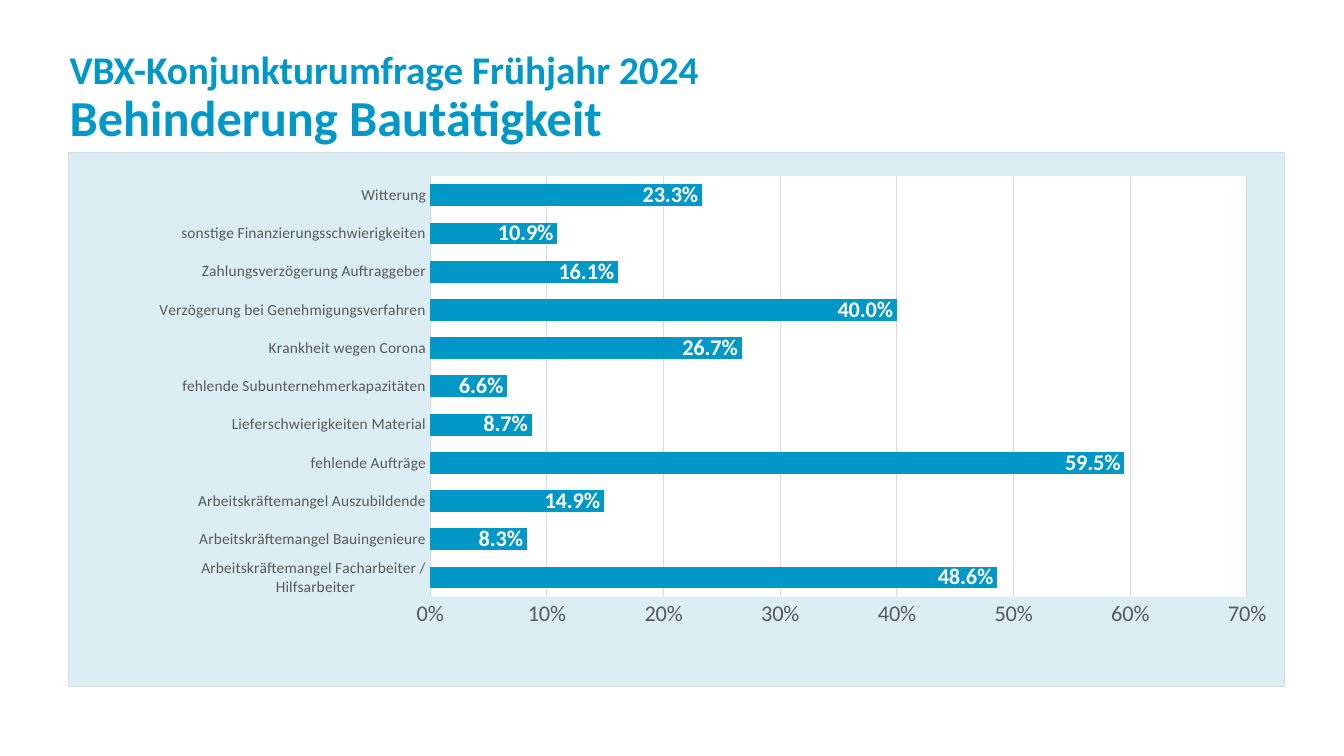
from lxml.etree import fromstring
from pptx import Presentation
from pptx.chart.data import CategoryChartData
from pptx.dml.color import RGBColor
from pptx.enum.chart import XL_CHART_TYPE, XL_LABEL_POSITION, XL_TICK_MARK
from pptx.enum.text import MSO_ANCHOR, MSO_AUTO_SIZE, PP_ALIGN
from pptx.oxml.ns import qn
from pptx.util import Pt

TITLE_LINES = [("VBX-Konjunkturumfrage Frühjahr 2024", 28), ("Behinderung Bautätigkeit", 36)]
OBSTACLES = [
    ("Arbeitskräftemangel Facharbeiter /\n Hilfsarbeiter", 0.486),
    ("Arbeitskräftemangel Bauingenieure", 0.083),
    ("Arbeitskräftemangel Auszubildende", 0.149),
    ("fehlende Aufträge", 0.595),
    ("Lieferschwierigkeiten Material", 0.087),
    ("fehlende Subunternehmerkapazitäten", 0.066),
    ("Krankheit wegen Corona", 0.267),
    ("Verzögerung bei Genehmigungsverfahren", 0.4),
    ("Zahlungsverzögerung Auftraggeber", 0.161),
    ("sonstige Finanzierungsschwierigkeiten", 0.109),
    ("Witterung", 0.233),
]
CHART_LEFT, CHART_TOP, CHART_WIDTH, CHART_HEIGHT = Pt(48.6), Pt(108.7), Pt(869), Pt(382.3)
PLOT_LEFT, PLOT_TOP, PLOT_WIDTH, PLOT_HEIGHT = Pt(258.5), Pt(16.8), Pt(584), Pt(300.9)

FONT = "Calibri"
BLUE = RGBColor(0x01, 0x97, 0xC6)
PALE_BLUE = RGBColor(0xDB, 0xEE, 0xF4)
WHITE = RGBColor(0xFF, 0xFF, 0xFF)
BLACK = RGBColor(0, 0, 0)
TEXT_GREY = RGBColor(0x59, 0x59, 0x59)
LINE_GREY = RGBColor(0xD9, 0xD9, 0xD9)
CHART_NAMESPACE = "http://schemas.openxmlformats.org/drawingml/2006/chart"
DRAWING_NAMESPACE = "http://schemas.openxmlformats.org/drawingml/2006/main"


def format_font(font, size, color, bold=False):
    font.name = FONT
    font.size = Pt(size)
    font.color.rgb = color
    font.bold = bold


def format_line(line):
    line.color.rgb = LINE_GREY
    line.width = Pt(0.75)


def area_properties(fill, border=None):
    outline = f'<a:solidFill><a:srgbClr val="{border}"/></a:solidFill>' if border else "<a:noFill/>"
    return fromstring(
        f'<c:spPr xmlns:c="{CHART_NAMESPACE}" xmlns:a="{DRAWING_NAMESPACE}">'
        f'<a:solidFill><a:srgbClr val="{fill}"/></a:solidFill>'
        f'<a:ln w="{Pt(0.75)}">{outline}</a:ln></c:spPr>'
    )


def plot_layout():
    fractions = {
        "x": PLOT_LEFT / CHART_WIDTH,
        "y": PLOT_TOP / CHART_HEIGHT,
        "w": PLOT_WIDTH / CHART_WIDTH,
        "h": PLOT_HEIGHT / CHART_HEIGHT,
    }
    modes = '<c:xMode val="edge"/><c:yMode val="edge"/>'
    sizes = "".join(f'<c:{name} val="{value}"/>' for name, value in fractions.items())
    return fromstring(
        f'<c:layout xmlns:c="{CHART_NAMESPACE}"><c:manualLayout>'
        f'<c:layoutTarget val="inner"/>{modes}{sizes}</c:manualLayout></c:layout>'
    )


def add_title(slide):
    title = slide.shapes.title
    title.left, title.top, title.width, title.height = Pt(42.5), Pt(22), Pt(874.8), Pt(97.2)
    frame = title.text_frame
    frame.text = "\v".join(text for text, size in TITLE_LINES)
    frame.word_wrap = True
    frame.auto_size = MSO_AUTO_SIZE.NONE
    frame.vertical_anchor = MSO_ANCHOR.MIDDLE
    paragraph = frame.paragraphs[0]
    paragraph.alignment = PP_ALIGN.LEFT
    paragraph.line_spacing = 0.9
    for run, (text, size) in zip(paragraph.runs, TITLE_LINES):
        format_font(run.font, size, BLUE, True)


def add_obstacle_chart(slide):
    data = CategoryChartData(number_format="0.0%")
    data.categories = [name for name, share in OBSTACLES]
    data.add_series("Series 1", [share for name, share in OBSTACLES])
    chart = slide.shapes.add_chart(
        XL_CHART_TYPE.BAR_STACKED, CHART_LEFT, CHART_TOP, CHART_WIDTH, CHART_HEIGHT, data
    ).chart
    chart.has_legend = False
    chart.has_title = False
    format_font(chart.font, 16, BLACK)

    plot = chart.plots[0]
    plot.gap_width = 75
    plot.overlap = 100
    plot.vary_by_categories = False
    series = plot.series[0]
    series.format.fill.solid()
    series.format.fill.fore_color.rgb = BLUE
    labels = series.data_labels
    labels.show_value = True
    labels.position = XL_LABEL_POSITION.INSIDE_END
    labels.number_format = "0.0%"
    labels.number_format_is_linked = False
    format_font(labels.font, 16, WHITE, True)

    for axis, size in ((chart.category_axis, 11), (chart.value_axis, 16)):
        axis.major_tick_mark = XL_TICK_MARK.NONE
        axis.minor_tick_mark = XL_TICK_MARK.NONE
        format_font(axis.tick_labels.font, size, TEXT_GREY)
    format_line(chart.category_axis.format.line)
    value_axis = chart.value_axis
    value_axis.minimum_scale = 0
    value_axis.maximum_scale = 0.7
    value_axis.major_unit = 0.1
    value_axis.tick_labels.number_format = "0%"
    value_axis.tick_labels.number_format_is_linked = False
    value_axis.format.line.fill.background()
    value_axis.has_major_gridlines = True
    format_line(value_axis.major_gridlines.format.line)

    chart_element = chart.element.find(qn("c:chart"))
    plot_area = chart_element.find(qn("c:plotArea"))
    for layout in plot_area.findall(qn("c:layout")):
        plot_area.remove(layout)
    plot_area.insert(0, plot_layout())
    plot_area.append(area_properties(WHITE))
    chart_element.addnext(area_properties(PALE_BLUE, LINE_GREY))


def main():
    presentation = Presentation()
    presentation.slide_width, presentation.slide_height = Pt(960), Pt(540)
    slide = presentation.slides.add_slide(presentation.slide_layouts[5])
    add_title(slide)
    add_obstacle_chart(slide)
    presentation.save("out.pptx")


if __name__ == "__main__":
    main()
